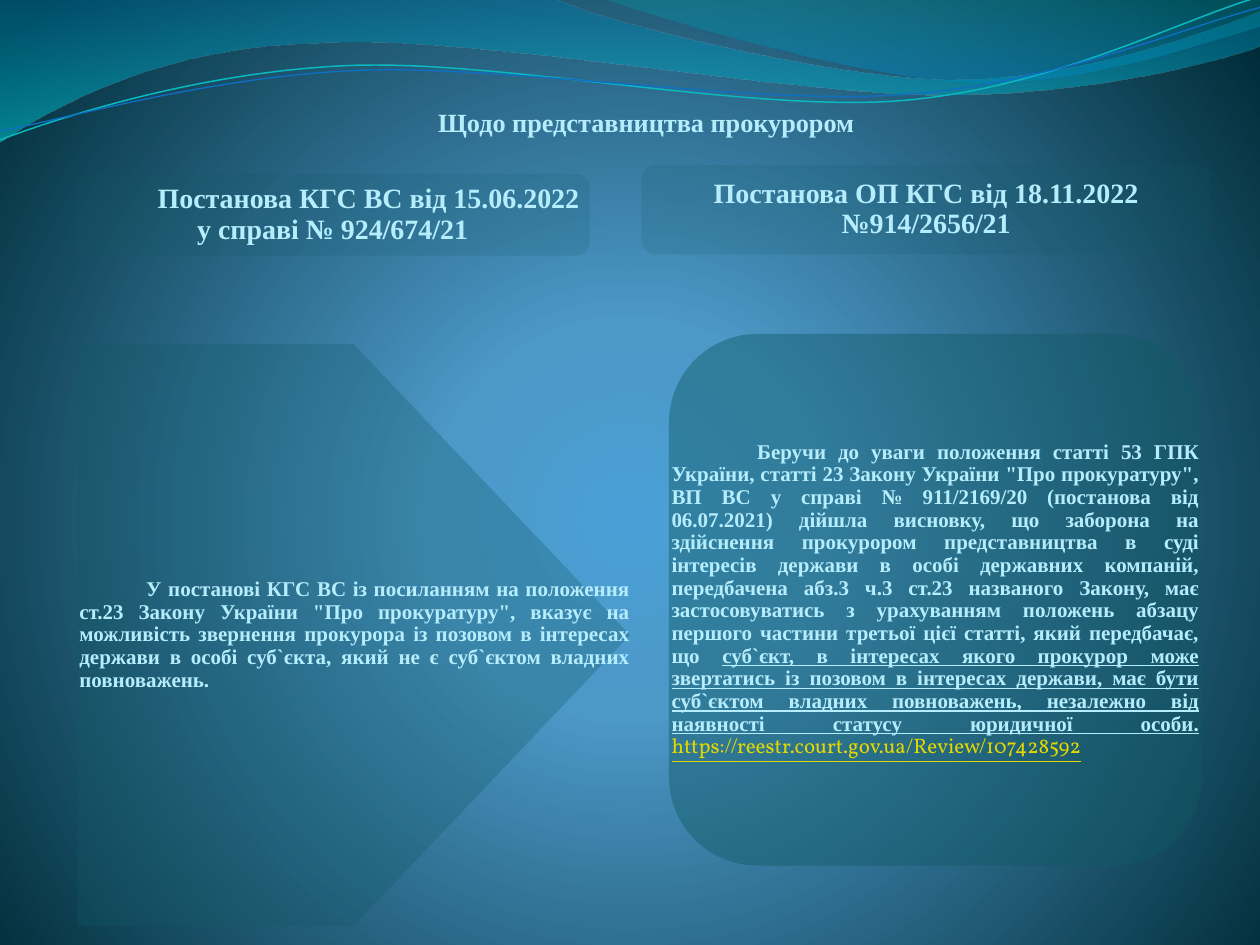
from math import cos, radians, sin

from lxml.etree import SubElement
from pptx import Presentation
from pptx.dml.color import RGBColor
from pptx.enum.shapes import MSO_SHAPE
from pptx.enum.text import MSO_ANCHOR, PP_ALIGN
from pptx.oxml.ns import qn
from pptx.util import Inches, Pt

COLORS = {
    "text": "B5EDFD", "link": "E2D700", "panel": "115964",
    "glow": "4AA0D6", "sky": "4C98C7", "night": "002C38",
    "blue": "0074A1", "aqua": "00C6CF", "teal": "00A1A9", "azure": "008BBF",
    "cyan_line": "0AB8BF", "blue_line": "0F6FC6",
}
TILT = 2.7

LEFT_WAVE = [(0, 0), (4.4, -0.01), (4.76, 0.17, 6.64, 0.63, 7.58, 0.63),
             (8.53, 0.63, 9.58, 0.26, 10, 0.09), (10.01, 0.36),
             (9.83, 0.44, 8.7, 0.76, 7.46, 0.75),
             (6.22, 0.75, 3.82, 0.28, 2.57, 0.34),
             (1.29, 0.36, 0.46, 0.83, -0.01, 1.13)]
RIGHT_WAVE = [(4.79, -0.01), (5.09, 0.11, 6.82, 0.62, 7.69, 0.65),
              (8.56, 0.69, 9.61, 0.32, 10, 0.21), (10, 0)]
CYAN_STRAND = [(0, 1.11), (0.48, 0.93, 1.58, 0.57, 2.77, 0.52),
               (3.95, 0.47, 5.93, 0.89, 7.13, 0.8),
               (8.33, 0.71, 9.38, 0.15, 9.98, -0.02)]
BLUE_STRAND = [(0, 1.04), (0.47, 0.96, 1.64, 0.61, 2.83, 0.56),
               (4.03, 0.51, 5.97, 0.84, 7.17, 0.75),
               (8.36, 0.67, 9.41, 0.21, 10, 0.06)]

TITLE = "Щодо представництва прокурором"
CASSATION_CASE = "Постанова КГС ВС від 15.06.2022 у справі № 924/674/21"
JOINT_CASE = "Постанова ОП КГС від 18.11.2022 №914/2656/21"
CASSATION_VIEW = (
    "У постанові КГС ВС із посиланням на положення ст.23 Закону України "
    "\"Про прокуратуру\", вказує на можливість звернення прокурора із позовом "
    "в інтересах держави в особі суб`єкта, який не є суб`єктом владних повноважень.")
JOINT_VIEW = (
    "Беручи до уваги положення статті 53 ГПК України, статті 23 Закону України "
    "\"Про прокуратуру\", ВП ВС у справі № 911/2169/20 (постанова від 06.07.2021) "
    "дійшла висновку, що заборона на здійснення прокурором представництва в суді "
    "інтересів держави в особі державних компаній, передбачена абз.3 ч.3 ст.23 "
    "названого Закону, має застосовуватись з урахуванням положень абзацу першого "
    "частини третьої цієї статті, який передбачає, що ")
JOINT_CONCLUSION = (
    "суб`єкт, в інтересах якого прокурор може звертатись із позовом в інтересах "
    "держави, має бути суб`єктом владних повноважень, незалежно від наявності "
    "статусу юридичної особи. ")
REGISTER_LINK = "https://reestr.court.gov.ua/Review/107428592"


def level(segments, center):
    turn = radians(TILT)
    center_x, center_y = center
    leveled = []
    for segment in segments:
        flat = []
        for x, y in zip(segment[::2], segment[1::2]):
            dx, dy = x - center_x, y - center_y
            flat += [center_x + dx * cos(turn) - dy * sin(turn),
                     center_y + dx * sin(turn) + dy * cos(turn)]
        leveled.append(flat)
    return leveled


class RulingSlide:
    font = {"name": "Times New Roman", "bold": True, "size": Pt(12)}

    def __init__(self, deck):
        self.slide = deck.slides.add_slide(deck.slide_layouts[6])

    def gradient(self, owner, stops, focus=None):
        solid = owner.find(qn("a:solidFill"))
        blend = solid.makeelement(qn("a:gradFill"), {"rotWithShape": "1"})
        owner.replace(solid, blend)
        stop_list = SubElement(blend, qn("a:gsLst"))
        for position, color, opacity in stops:
            stop = SubElement(stop_list, qn("a:gs"), pos=str(position * 1000))
            self.opacity(SubElement(stop, qn("a:srgbClr"), val=COLORS[color]), opacity)
        if focus:
            circle = SubElement(blend, qn("a:path"), {"path": "circle"})
            SubElement(circle, qn("a:fillToRect"),
                       {side: str(share * 1000) for side, share in focus.items()})
        else:
            SubElement(blend, qn("a:lin"), ang="5400000", scaled="0")

    def opacity(self, color, percent):
        if percent < 100:
            SubElement(color, qn("a:alpha"), val=str(percent * 1000))

    def background(self, stops, focus):
        self.slide.background.fill.solid()
        self.gradient(self.slide.element.find(".//" + qn("p:bgPr")), stops, focus)

    def outline(self, segments, closed):
        points = [(Inches(x), Inches(y)) for segment in segments
                  for x, y in zip(segment[::2], segment[1::2])]
        builder = self.slide.shapes.build_freeform(*points[0])
        builder.add_line_segments(points[1:], close=closed)
        shape = builder.convert_to_shape()
        shape.shadow.inherit = False
        steps = iter(shape.element.spPr.findall(".//" + qn("a:lnTo")))
        for segment in segments[1:]:
            step = next(steps)
            if len(segment) == 6:
                curve = step.makeelement(qn("a:cubicBezTo"), {})
                step.getparent().replace(step, curve)
                curve.append(step[0])
                for handle in (next(steps), next(steps)):
                    curve.append(handle[0])
                    handle.getparent().remove(handle)
        return shape

    def wave(self, segments, stops):
        wave = self.outline(segments, True)
        wave.fill.solid()
        self.gradient(wave.element.spPr, stops)
        wave.line.fill.background()

    def strand(self, segments, center, color, width):
        strand = self.outline(level(segments, center), False)
        strand.rotation = 360 - TILT
        strand.fill.background()
        strand.line.color.rgb = RGBColor.from_string(COLORS[color])
        strand.line.width = Pt(width)

    def panel(self, preset, box, opacity):
        panel = self.slide.shapes.add_shape(preset, *map(Inches, box))
        panel.shadow.inherit = False
        panel.fill.solid()
        panel.fill.fore_color.rgb = RGBColor.from_string(COLORS["panel"])
        self.opacity(panel.element.spPr.find(".//" + qn("a:srgbClr")), opacity)
        panel.line.fill.background()

    def text(self, box, runs, insets, align=PP_ALIGN.CENTER, indent=0, spacing=0.9,
             anchor=MSO_ANCHOR.MIDDLE):
        frame = self.slide.shapes.add_textbox(*map(Inches, box)).text_frame
        left, top, right, bottom = map(Inches, insets)
        layout = {"word_wrap": True, "vertical_anchor": anchor,
                  "margin_left": left, "margin_right": right,
                  "margin_top": top, "margin_bottom": bottom}
        for name, value in layout.items():
            setattr(frame, name, value)
        paragraph = frame.paragraphs[0]
        paragraph.alignment = align
        paragraph.line_spacing = spacing
        if indent:
            paragraph._p.get_or_add_pPr().set("indent", str(Inches(indent)))
        for words, color, changes in runs:
            run = paragraph.add_run()
            run.text = words
            for name, value in {**self.font, **changes}.items():
                setattr(run.font, name, value)
            run.font.color.rgb = RGBColor.from_string(COLORS[color])


def main():
    deck = Presentation()
    deck.slide_width, deck.slide_height = Inches(10), Inches(7.5)
    page = RulingSlide(deck)

    page.background([(0, "glow", 100), (25, "sky", 100), (100, "night", 100)],
                    {"l": 10, "t": 110, "r": 10, "b": 100})
    page.wave(LEFT_WAVE, [(0, "blue", 45), (100, "aqua", 55)])
    page.wave(RIGHT_WAVE, [(0, "teal", 30), (80, "azure", 45)])
    page.strand(CYAN_STRAND, (4.99, 0.58), "cyan_line", 0.85)
    page.strand(BLUE_STRAND, (5, 0.59), "blue_line", 0.75)

    page.text((0.67, 0.36, 8.94, 1.02), [(TITLE, "text", {"size": Pt(15)})],
              (0, 0, 0.02, 0.33), spacing=1, anchor=MSO_ANCHOR.BOTTOM)

    heading = {"size": Pt(16)}
    rulings = [
        (MSO_SHAPE.PENTAGON, (0.61, 2.73, 4.39, 4.62), 29,
         [(CASSATION_VIEW, "text", {})],
         {"insets": (0.02, 0.01, 0, 0.01), "align": PP_ALIGN.JUSTIFY, "indent": 0.53}),
        (MSO_SHAPE.FLOWCHART_ALTERNATE_PROCESS, (5.31, 2.65, 4.23, 4.22), 44,
         [(JOINT_VIEW, "text", {}),
          (JOINT_CONCLUSION, "text", {"underline": True}),
          (REGISTER_LINK, "link",
           {"underline": True, "bold": False, "name": "Vollkorn"})],
         {"insets": [0.02] * 4, "align": PP_ALIGN.JUSTIFY, "indent": 0.68}),
        (MSO_SHAPE.ROUNDED_RECTANGLE, (0.6, 1.38, 4.08, 0.65), 17,
         [(CASSATION_CASE, "text", heading)], {"insets": [0.05] * 4, "indent": 0.57}),
        (MSO_SHAPE.ROUNDED_RECTANGLE, (5.09, 1.31, 4.52, 0.71), 16,
         [(JOINT_CASE, "text", heading)], {"insets": [0.07] * 4}),
    ]
    for preset, box, opacity, runs, layout in rulings:
        page.panel(preset, box, opacity)
        page.text(box, runs, **layout)

    deck.save("out.pptx")


if __name__ == "__main__":
    main()
